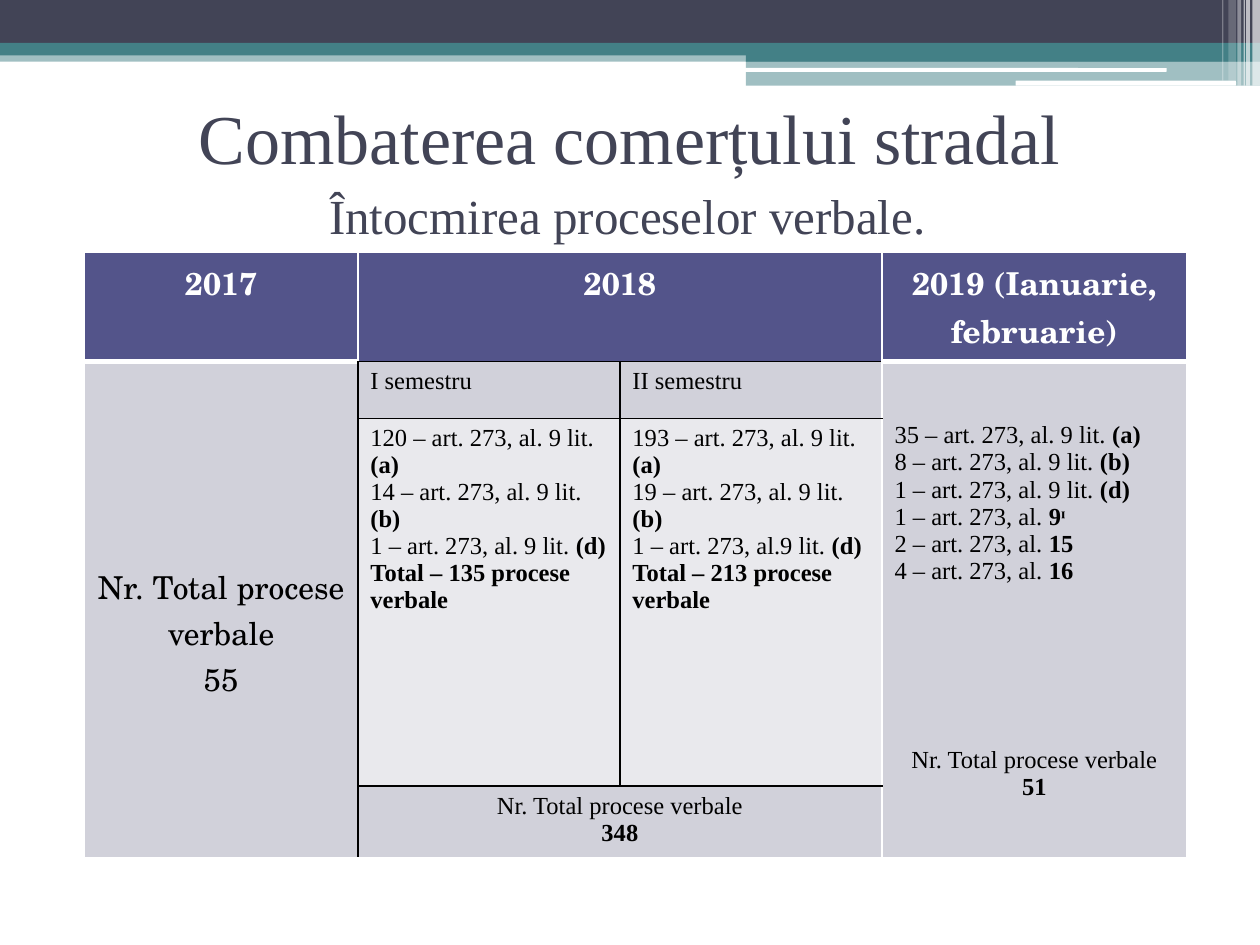
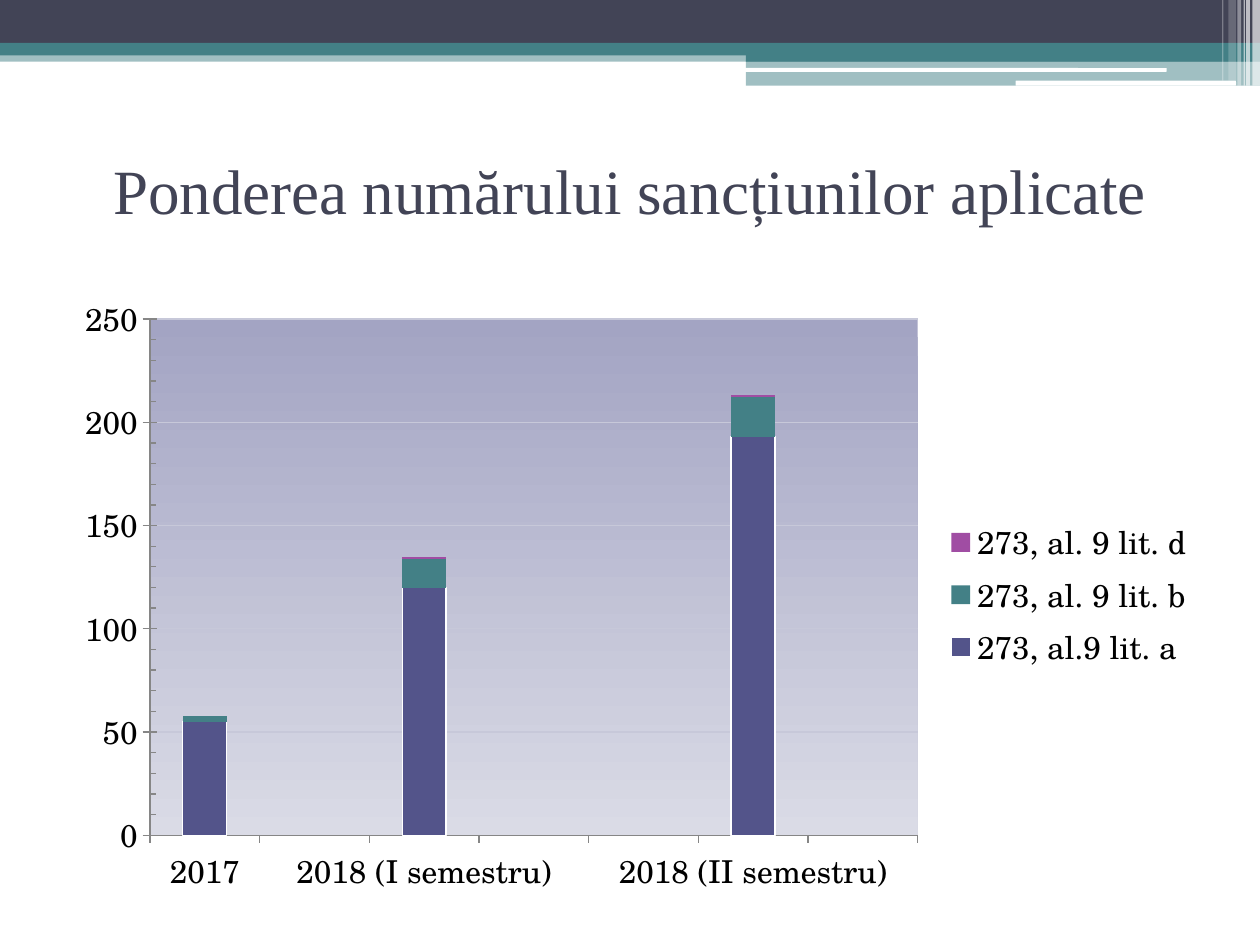
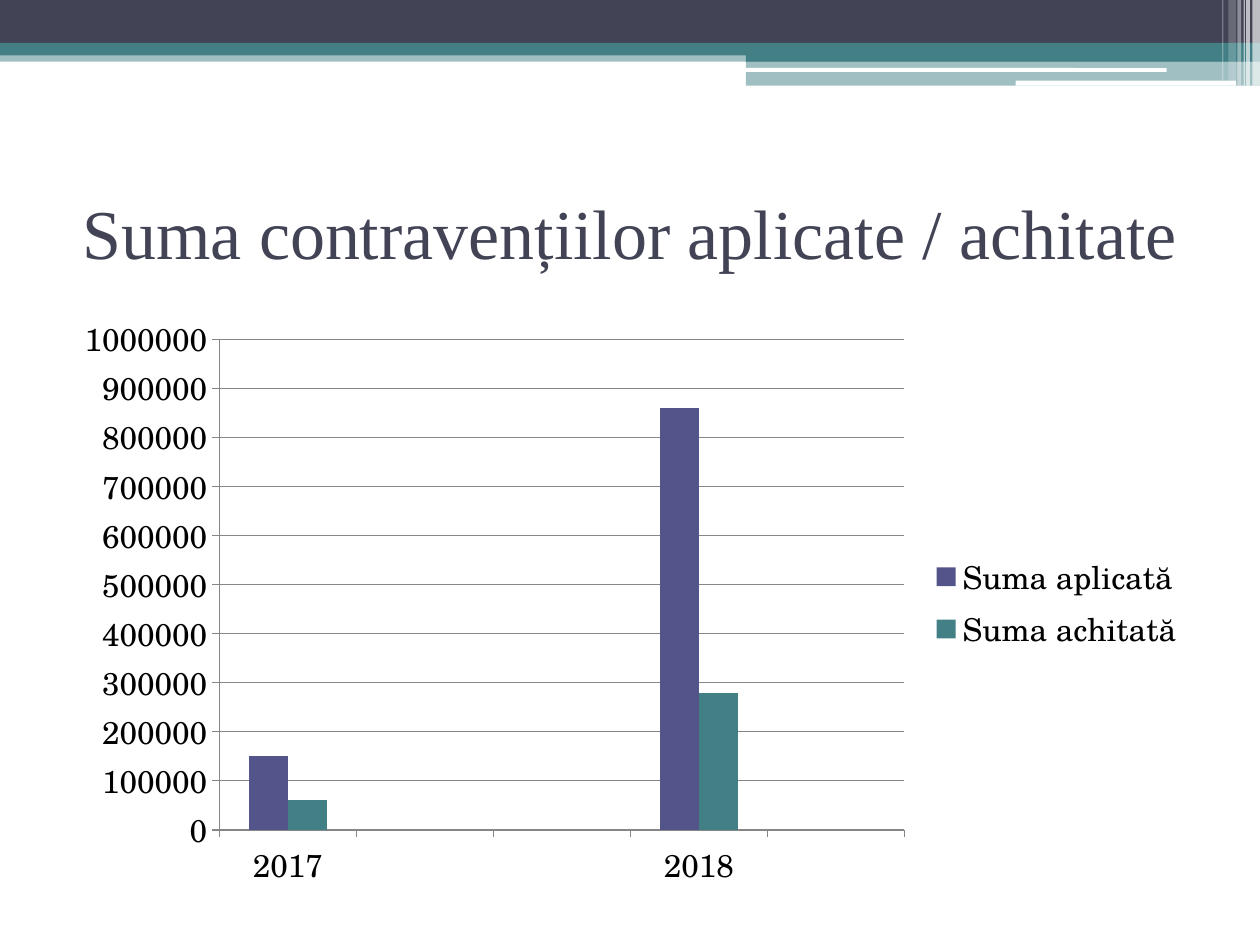
import lxml.etree
import pptx
import pptx.chart.data
import pptx.dml.color
import pptx.enum.chart
import pptx.enum.shapes
import pptx.enum.text
import pptx.oxml
import pptx.oxml.ns
import pptx.util

INCH, PT = pptx.util.Inches, pptx.util.Pt
QN, ADD = pptx.oxml.ns.qn, lxml.etree.SubElement
SERIF, SCHOLA = "Times New Roman", "TeX Gyre Schola"
SLATE, TEAL, INDIGO, PURPLE = "424456", "438086", "53548A", "A04DA3"
WHITE, BLACK, AXIS_GREY = "FFFFFF", "000000", "868686"
LILAC, PALE_LILAC = "D1D1DA", "E9E9ED"
CENTER = pptx.enum.text.PP_ALIGN.CENTER
LEFT = pptx.enum.text.PP_ALIGN.LEFT
MIDDLE = pptx.enum.text.MSO_ANCHOR.MIDDLE
RECT = pptx.enum.shapes.MSO_SHAPE.RECTANGLE
ROUNDED = pptx.enum.shapes.MSO_SHAPE.ROUNDED_RECTANGLE
TICK = pptx.enum.chart.XL_TICK_MARK


def color(hex_code):
    return pptx.dml.color.RGBColor.from_string(hex_code)


def write(frame, lines, font=SERIF, size=14, ink=BLACK, bold=False, align=LEFT, before=0):
    frame.word_wrap = True
    for index, line in enumerate(lines):
        paragraph = frame.add_paragraph() if frame.text else frame.paragraphs[0]
        paragraph.alignment = align
        if index == 0 and before:
            paragraph.space_before = PT(before)
        for position, words in enumerate(line.split("|")):
            if words:
                run = paragraph.add_run()
                run.text = words
                run.font.name, run.font.size = font, PT(size)
                run.font.bold = bold or position == 1
                run.font.color.rgb = color(ink)


deck = pptx.Presentation()
deck.slide_width, deck.slide_height = INCH(10), INCH(7.5)

bands = [
    (RECT, 0, 0.4, 10, 0.09, TEAL, 50),
    (RECT, 0, 0, 10, 0.34, SLATE, 100),
    (RECT, 0, 0.34, 10, 0.1, TEAL, 100),
    (RECT, 5.92, 0.39, 4.08, 0.1, TEAL, 100),
    (RECT, 5.92, 0.48, 4.08, 0.2, TEAL, 50),
    (ROUNDED, 5.91, 0.54, 3.35, 0.03, WHITE, 100),
    (ROUNDED, 8.06, 0.64, 1.75, 0.04, WHITE, 100),
    (RECT, 9.94, 0, 0.06, 0.68, WHITE, 65),
    (RECT, 9.89, 0, 0.03, 0.68, WHITE, 65),
    (RECT, 9.87, 0, 0.01, 0.68, WHITE, 60),
    (RECT, 9.82, 0, 0.03, 0.68, WHITE, 40),
    (RECT, 9.75, 0, 0.06, 0.64, WHITE, 20),
    (RECT, 9.7, 0, 0.01, 0.64, WHITE, 30),
]
titles = [
    ("Combaterea comerțului stradal", 0.5, 40),
    ("Ponderea numărului sancțiunilor aplicate", 0.92, 36),
    ("Suma contravențiilor aplicate / achitate", 1.25, 40),
]

slides = []
for title, title_top, title_size in titles:
    slide = deck.slides.add_slide(deck.slide_layouts[6])
    slides.append(slide)
    for outline, left, top, width, height, tint, opacity in bands:
        band = slide.shapes.add_shape(outline, INCH(left), INCH(top), INCH(width), INCH(height))
        band.shadow.inherit = False
        band.line.fill.background()
        band.fill.solid()
        band.fill.fore_color.rgb = color(tint)
        if opacity < 100:
            tint_xml = next(band.fill._xPr.iter(QN("a:srgbClr")))
            ADD(tint_xml, QN("a:alpha"), val=str(opacity * 1000))
    heading = slide.shapes.add_textbox(INCH(0.5), INCH(title_top), INCH(9), INCH(1.17)).text_frame
    heading.vertical_anchor = MIDDLE
    write(heading, [title], size=title_size, ink=SLATE, align=CENTER)

subtitle = slides[0].shapes.add_textbox(INCH(0.48), INCH(1.42), INCH(9), INCH(0.58)).text_frame
write(subtitle, ["Întocmirea proceselor verbale."], size=28, ink=SLATE, align=CENTER, before=3)

column_widths = [2.17, 2.08, 2.08, 2.42]
row_heights = [0.87, 0.45, 2.92, 0.53]
reports = slides[0].shapes.add_table(
    4, 4, INCH(0.67), INCH(2), INCH(sum(column_widths)), INCH(sum(row_heights))).table
for column, width in zip(reports.columns, column_widths):
    column.width = INCH(width)
for row, height in zip(reports.rows, row_heights):
    row.height = INCH(height)

for r in range(4):
    for c in range(4):
        cell = reports.cell(r, c)
        cell.fill.solid()
        inner = c in (1, 2)
        cell.fill.fore_color.rgb = color(
            INDIGO if r == 0 else PALE_LILAC if r == 2 and inner else LILAC)
        semester_split = r in (1, 2)
        edges = {
            "lnL": r > 0 and (c == 1 or c == 2 and semester_split),
            "lnR": r > 0 and (c == 0 or c == 1 and semester_split),
            "lnT": r > 0 and inner,
            "lnB": r < 3 and inner,
        }
        properties = cell._tc.get_or_add_tcPr()
        for order, (edge, dark) in enumerate(edges.items()):
            thick = not dark and (r, edge) in ((0, "lnB"), (1, "lnT"))
            border = lxml.etree.Element(QN("a:" + edge), w=str(PT(3 if thick else 1)))
            ADD(ADD(border, QN("a:solidFill")), QN("a:srgbClr"), val=BLACK if dark else WHITE)
            properties.insert(order, border)

for start, end in [((0, 1), (0, 2)), ((1, 0), (3, 0)), ((1, 3), (3, 3)), ((3, 1), (3, 2))]:
    reports.cell(*start).merge(reports.cell(*end))

for c, year in [(0, "2017"), (1, "2018"), (3, "2019 (Ianuarie, februarie)")]:
    write(reports.cell(0, c).text_frame, [year], font=SCHOLA, size=18, ink=WHITE,
          bold=True, align=CENTER)

total_2017 = reports.cell(1, 0)
total_2017.vertical_anchor = MIDDLE
total_2017.margin_top = INCH(0.42)
write(total_2017.text_frame, ["Nr. Total procese verbale", "55"], font=SCHOLA, size=18, align=CENTER)

semesters = [
    ("I semestru", ["120 – art. 273, al. 9 lit. |(a)", "14 – art. 273, al. 9 lit. |(b)",
                    "1 – art. 273, al. 9 lit. |(d)", "|Total – 135 procese verbale"]),
    ("II semestru", ["193 – art. 273, al. 9 lit. |(a)", "19 – art. 273, al. 9 lit. |(b)",
                     "1 – art. 273, al.9 lit. |(d)", "|Total – 213 procese verbale"]),
]
for c, (semester, articles) in enumerate(semesters, 1):
    write(reports.cell(1, c).text_frame, [semester])
    write(reports.cell(2, c).text_frame, articles)
write(reports.cell(3, 1).text_frame, ["Nr. Total procese verbale", "|348"], align=CENTER)

early_2019 = reports.cell(1, 3)
early_2019.margin_top = INCH(0.48)
write(early_2019.text_frame, [
    "35 – art. 273, al. 9 lit. |(a)", "8 – art. 273, al. 9 lit. |(b)",
    "1 – art. 273, al. 9 lit. |(d)", "1 – art. 273, al. |9ᶦ",
    "2 – art. 273, al. |15", "4 – art. 273, al. |16"])
write(early_2019.text_frame, ["Nr. Total procese verbale", "|51"], align=CENTER, before=92.5)

charts = [
    dict(slide=slides[1], kind="COLUMN_STACKED", frame=(0.5, 2.25, 9.08, 4.94),
         plot=dict(x=0.076, y=0.057, w=0.671, h=0.83), overlap=100, top=250, step=50,
         ticks=(TICK.CROSS, TICK.INSIDE), grid="C7C8D9", gradient=("A3A4C3", "DADBE6"),
         categories=["2017", "", "2018 (I semestru)", "", "", "2018 (II semestru)", ""],
         series=[("273, al.9 lit. a", [55, None, 120, None, None, 193, None], INDIGO, WHITE),
                 ("273, al. 9 lit. b", [3, None, 14, None, None, 19, None], TEAL, None),
                 ("273, al. 9 lit. d", [0, None, 1, None, None, 1, None], PURPLE, None)]),
    dict(slide=slides[2], kind="COLUMN_CLUSTERED", frame=(0.5, 2.42, 9, 4.73),
         plot=dict(x=0.138, y=0.058, w=0.604, h=0.823), overlap=0, top=1000000, step=100000,
         ticks=(TICK.OUTSIDE, TICK.NONE), grid=AXIS_GREY, gradient=None,
         categories=["2017", "", "", "2018", ""],
         series=[("Suma aplicată", [150000, None, None, 860000, None], INDIGO, None),
                 ("Suma achitată", [60000, None, None, 280000, None], TEAL, None)]),
]
for design in charts:
    figures = pptx.chart.data.CategoryChartData()
    figures.categories = design["categories"]
    for name, values, tint, outline in design["series"]:
        figures.add_series(name, values)
    chart = design["slide"].shapes.add_chart(
        pptx.enum.chart.XL_CHART_TYPE[design["kind"]], *map(INCH, design["frame"]), figures).chart
    chart.has_title = False
    chart.font.name, chart.font.size = SCHOLA, PT(18)
    chart.font.color.rgb = color(BLACK)
    chart.has_legend = True
    chart.legend.position = pptx.enum.chart.XL_LEGEND_POSITION.RIGHT
    chart.legend.include_in_layout = False

    columns = chart.plots[0]
    columns.gap_width, columns.overlap = 150, design["overlap"]
    columns.vary_by_categories = False
    for series, (name, values, tint, outline) in zip(columns.series, design["series"]):
        series.format.fill.solid()
        series.format.fill.fore_color.rgb = color(tint)
        if outline:
            series.format.line.color.rgb = color(outline)
            series.format.line.width = PT(0.75)

    scale, periods = chart.value_axis, chart.category_axis
    scale.minimum_scale, scale.maximum_scale = 0, design["top"]
    scale.major_unit = design["step"]
    scale.major_tick_mark, scale.minor_tick_mark = design["ticks"]
    periods.major_tick_mark = TICK.OUTSIDE
    scale.has_major_gridlines = True
    for line, tint in [(scale.major_gridlines.format.line, design["grid"]),
                       (scale.format.line, AXIS_GREY), (periods.format.line, AXIS_GREY)]:
        line.color.rgb = color(tint)
        line.width = PT(0.75)
    label_skip = lxml.etree.Element(QN("c:tickLblSkip"), val="1")
    periods._element.find(QN("c:noMultiLvlLbl")).addprevious(label_skip)

    plot_area = chart._chartSpace.chart.plotArea
    for old_layout in plot_area.findall(QN("c:layout")):
        plot_area.remove(old_layout)
    layout = lxml.etree.Element(QN("c:layout"))
    plot_area.insert(0, layout)
    manual = ADD(layout, QN("c:manualLayout"))
    ADD(manual, QN("c:layoutTarget"), val="inner")
    for side in "xy":
        ADD(manual, QN(f"c:{side}Mode"), val="edge")
    for side, share in design["plot"].items():
        ADD(manual, QN("c:" + side), val=str(share))

    if design["gradient"]:
        backdrop = ADD(ADD(plot_area, QN("c:spPr")), QN("a:gradFill"))
        stops = ADD(backdrop, QN("a:gsLst"))
        for position, tint in zip((0, 100000), design["gradient"]):
            ADD(ADD(stops, QN("a:gs"), pos=str(position)), QN("a:srgbClr"), val=tint)
        ADD(backdrop, QN("a:lin"), ang="5400000", scaled="0")

deck.save("out.pptx")
